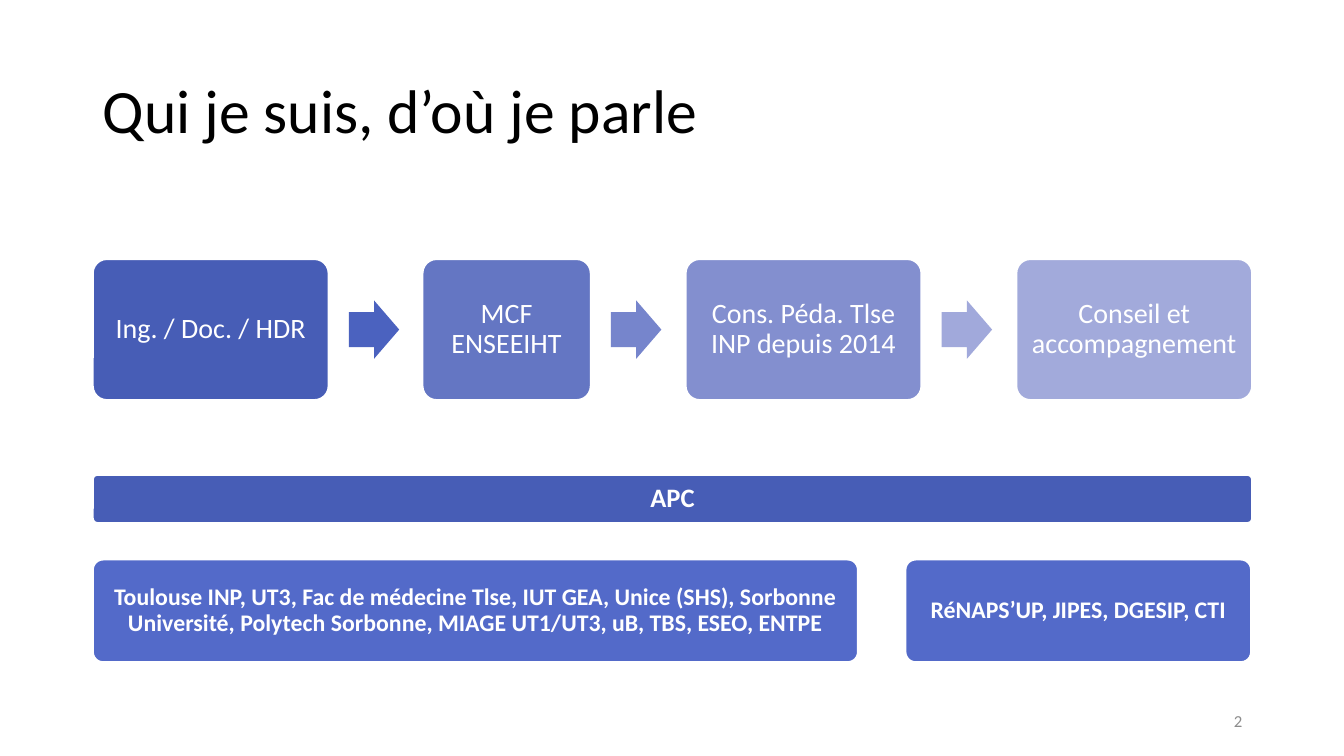
"""Build a slide on a teaching career and the work on APC behind it."""
from pptx import Presentation
from pptx.dml.color import RGBColor
from pptx.enum.shapes import MSO_SHAPE as Preset
from pptx.enum.text import MSO_ANCHOR as Anchor, PP_ALIGN as Align
from pptx.util import Inches, Pt

BLACK = RGBColor(0x00, 0x00, 0x00)
WHITE = RGBColor(0xFF, 0xFF, 0xFF)
GREY = RGBColor(0x8C, 0x8C, 0x8C)
DARK_BLUE = RGBColor(0x47, 0x5D, 0xB6)
MID_BLUE = RGBColor(0x53, 0x6A, 0xC9)
STEP_BLUES = [DARK_BLUE, RGBColor(0x64, 0x76, 0xC3), RGBColor(0x83, 0x8F, 0xCF), RGBColor(0xA2, 0xAA, 0xDB)]
ARROW_BLUES = [RGBColor(0x4B, 0x62, 0xBF), RGBColor(0x76, 0x85, 0xCC), RGBColor(0xA1, 0xA9, 0xDB)]

LEFT = 0.92
WIDTH = 11.5
STEP_TOP, STEP_HEIGHT = 2.57, 1.4
ARROW_WIDTH, ARROW_HEIGHT, ARROW_GAP = 0.5, 0.58, 0.2

presentation = Presentation()
presentation.slide_width = Inches(13.33)
presentation.slide_height = Inches(7.5)
slide = presentation.slides.add_slide(presentation.slide_layouts[6])


def write(shape, text, size, color=WHITE, bold=False, align=Align.CENTER, spacing=0.9, inset=None):
    frame = shape.text_frame
    frame.word_wrap = True
    frame.vertical_anchor = Anchor.MIDDLE
    if inset is not None:
        frame.margin_left = frame.margin_right = Inches(inset)
        frame.margin_top = frame.margin_bottom = Inches(inset)
    paragraph = frame.paragraphs[0]
    paragraph.text = text
    paragraph.alignment = align
    paragraph.line_spacing = spacing
    paragraph.font.name = "Calibri"
    paragraph.font.size = Pt(size)
    paragraph.font.bold = bold
    paragraph.font.color.rgb = color


def add_block(preset, left, top, width, height, fill, adjustments):
    shape = slide.shapes.add_shape(preset, Inches(left), Inches(top), Inches(width), Inches(height))
    shape.shadow.inherit = False
    shape.fill.solid()
    shape.fill.fore_color.rgb = fill
    for index, value in enumerate(adjustments):
        shape.adjustments[index] = value
    if preset == Preset.ROUNDED_RECTANGLE:
        shape.line.color.rgb = WHITE
        shape.line.width = Pt(1.5)
    else:
        shape.line.fill.background()
    return shape


title = slide.shapes.add_textbox(Inches(LEFT), Inches(0.4), Inches(WIDTH), Inches(1.45))
write(title, "Qui je suis, d’où je parle", 44, color=BLACK, align=Align.LEFT)

steps = [
    ("Ing. / Doc. / HDR", LEFT, 2.34),
    ("MCF ENSEEIHT", 4.19, 1.67),
    ("Cons. Péda. Tlse INP depuis 2014", 6.8, 2.34),
    ("Conseil et accompagnement", 10.08, 2.34),
]
for (text, left, width), fill in zip(steps, STEP_BLUES):
    step = add_block(Preset.ROUNDED_RECTANGLE, left, STEP_TOP, width, STEP_HEIGHT, fill, [0.1])
    write(step, text, 20, inset=0.08)

arrow_top = STEP_TOP + (STEP_HEIGHT - ARROW_HEIGHT) / 2
for (text, left, width), fill in zip(steps, ARROW_BLUES):
    add_block(Preset.RIGHT_ARROW, left + width + ARROW_GAP, arrow_top, ARROW_WIDTH, ARROW_HEIGHT, fill, [0.6, 0.5])

bands = [
    ("APC", LEFT, 4.71, WIDTH, 0.48, DARK_BLUE, 19, 0.08),
    ("Toulouse INP, UT3, Fac de médecine Tlse, IUT GEA, Unice (SHS), Sorbonne Université, "
     "Polytech Sorbonne, MIAGE UT1/UT3, uB, TBS, ESEO, ENTPE", LEFT, 5.55, 7.59, 1.02, MID_BLUE, 17, 0.07),
    ("RéNAPS’UP, JIPES, DGESIP, CTI", 8.98, 5.55, 3.43, 1.02, MID_BLUE, 17, 0.07),
]
for text, left, top, width, height, fill, size, inset in bands:
    band = add_block(Preset.ROUNDED_RECTANGLE, left, top, width, height, fill, [0.1])
    write(band, text, size, bold=True, inset=inset)

page_number = slide.shapes.add_textbox(Inches(9.42), Inches(6.95), Inches(3), Inches(0.4))
write(page_number, "2", 12, color=GREY, align=Align.RIGHT, spacing=1.0)

presentation.save("out.pptx")
